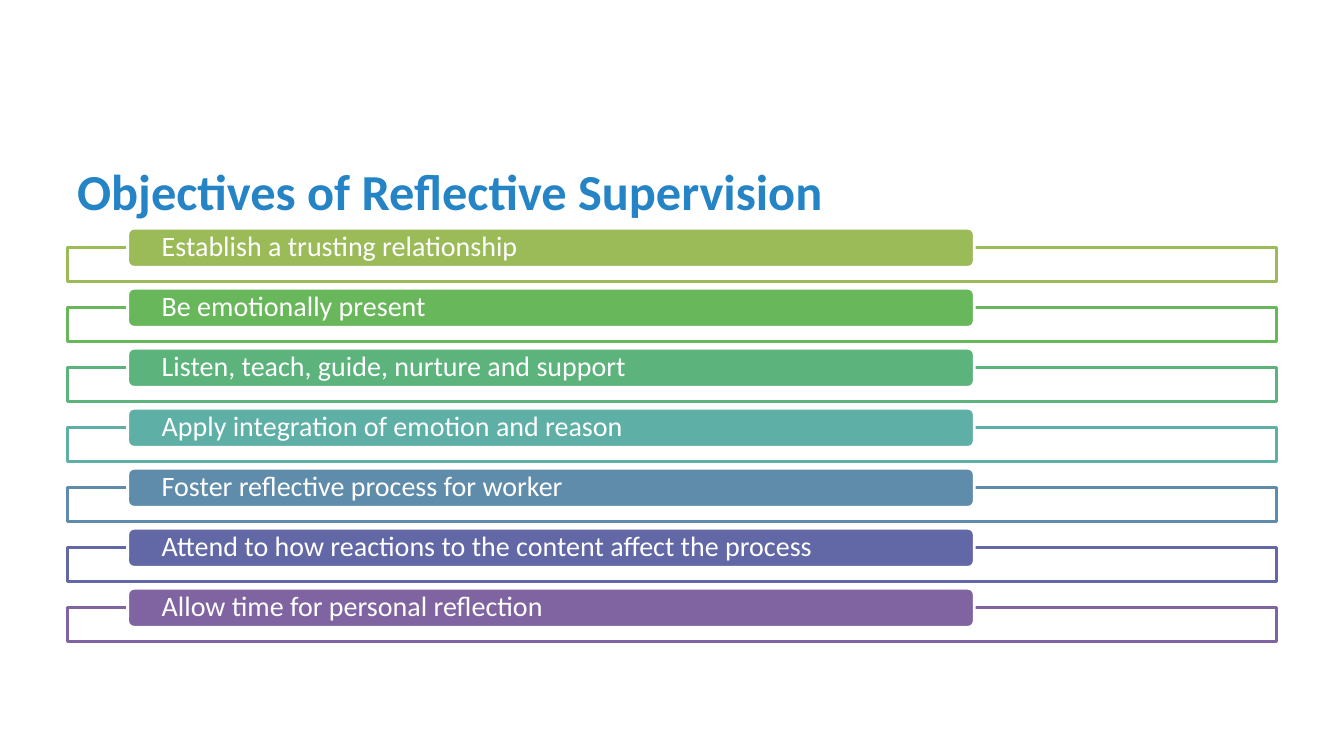
from lxml import etree
from pptx import Presentation
from pptx.dml import color
from pptx.enum import shapes, text
from pptx.oxml import ns
from pptx.util import Pt


def rgb(value):
    return color.RGBColor.from_string(value)


class ObjectivesSlide:
    """Holds the style and the slide, and draws each kind of element."""

    font_name = "Calibri"
    white = "FFFFFF"
    title_color = "2584C6"
    line_width = 2

    def __init__(self, slide):
        self.slide = slide

    def set_words(self, shape, words, size, hue, inset, bold=False, spacing=None):
        frame = shape.text_frame
        frame.word_wrap = True
        frame.vertical_anchor = text.MSO_ANCHOR.MIDDLE
        frame.margin_left = frame.margin_right = Pt(inset)
        frame.margin_top = frame.margin_bottom = 0
        paragraph = frame.paragraphs[0]
        paragraph.text = words
        paragraph.alignment = text.PP_ALIGN.LEFT
        paragraph.line_spacing = spacing
        font = paragraph.font
        font.name, font.size, font.bold = self.font_name, Pt(size), bold
        font.color.rgb = rgb(hue)

    def title(self, words, left, top, width, height):
        heading = self.slide.shapes.add_textbox(Pt(left), Pt(top), Pt(width), Pt(height))
        self.set_words(heading, words, 36, self.title_color, 7.2, bold=True)

    def block(self, kind, left, top, width, height, fill, line):
        shape = self.slide.shapes.add_shape(kind, Pt(left), Pt(top), Pt(width), Pt(height))
        shape.shadow.inherit = False
        shape.fill.solid()
        shape.fill.fore_color.rgb = rgb(fill)
        shape.line.color.rgb = rgb(line)
        shape.line.width = Pt(self.line_width)
        return shape

    def frame(self, left, top, width, height, hue):
        outline = self.block(shapes.MSO_SHAPE.RECTANGLE, left, top, width, height, self.white, hue)
        fill_color = outline._element.spPr.find(ns.qn("a:solidFill"))[0]
        etree.SubElement(fill_color, ns.qn("a:alpha"), val="90000")

    def label(self, words, left, top, width, height, hue):
        pill = self.block(
            shapes.MSO_SHAPE.ROUNDED_RECTANGLE, left, top, width, height, hue, self.white
        )
        self.set_words(pill, words, 20, self.white, 23, spacing=0.9)


OBJECTIVES = [
    ("Establish a trusting relationship", "9BBB59"),
    ("Be emotionally present", "69B75B"),
    ("Listen, teach, guide, nurture and support", "5CB37C"),
    ("Apply integration of emotion and reason", "5EAFA6"),
    ("Foster reflective process for worker", "608CAB"),
    ("Attend to how reactions to the content affect the process", "6267A6"),
    ("Allow time for personal reflection", "8064A2"),
]
LEFT, WIDTH = 48, 864
FIRST_LABEL_TOP, ROW_STEP = 163, 42.86
FRAME_DROP = 14


def main():
    deck = Presentation()
    deck.slide_width, deck.slide_height = Pt(960), Pt(540)
    page = ObjectivesSlide(deck.slides.add_slide(deck.slide_layouts[6]))
    page.title("Objectives of Reflective Supervision", LEFT, 118, WIDTH, 35.5)
    for row, (objective, hue) in enumerate(OBJECTIVES):
        top = FIRST_LABEL_TOP + row * ROW_STEP
        page.frame(LEFT, top + FRAME_DROP, WIDTH, 24, hue)
        page.label(objective, LEFT + 43.2, top, 0.7 * WIDTH, 28, hue)
    deck.save("out.pptx")


if __name__ == "__main__":
    main()
